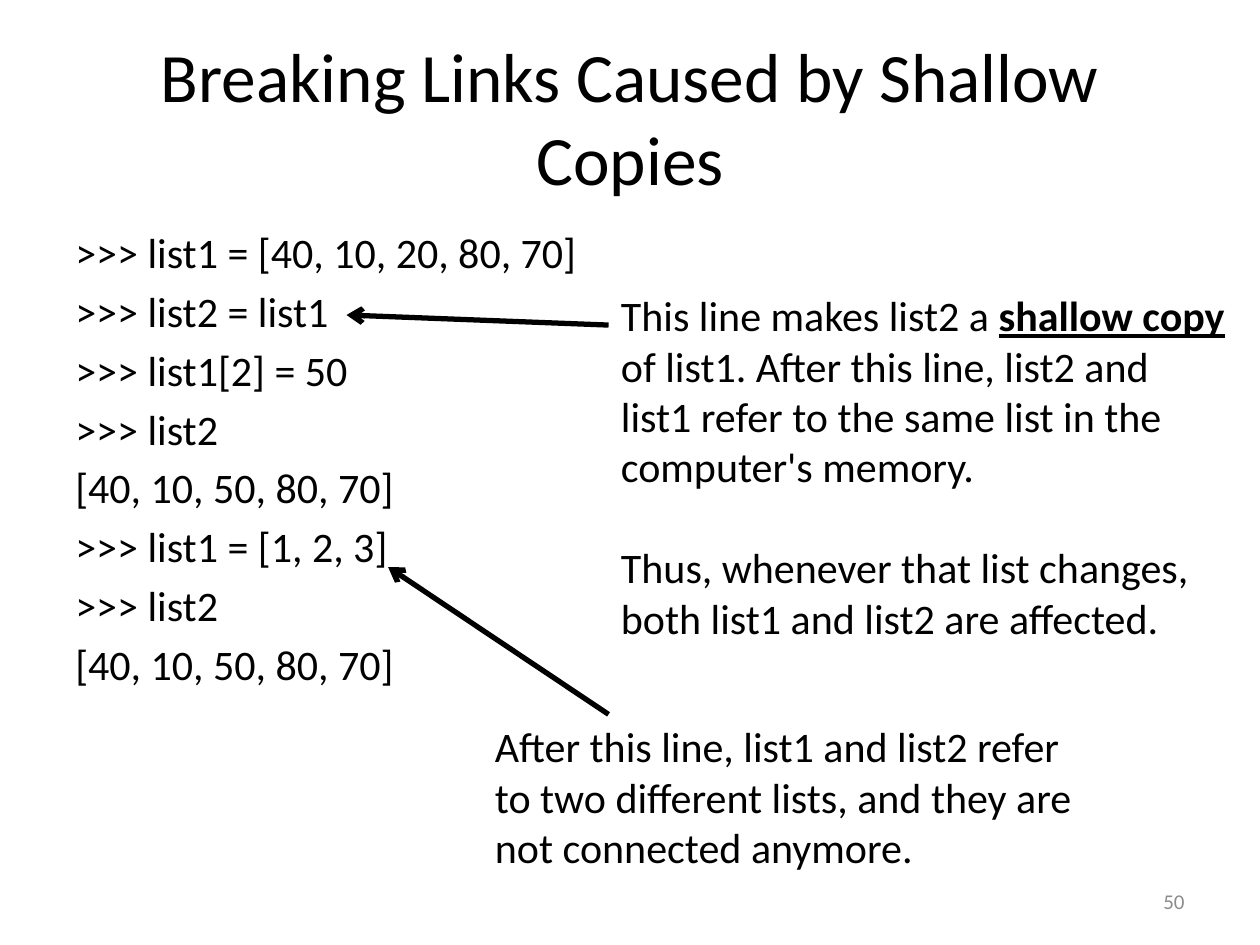
from lxml import etree
from pptx import Presentation
from pptx import util as u
from pptx.dml.color import RGBColor
from pptx.enum import shapes, text
from pptx.oxml.ns import qn

BLACK = RGBColor(0, 0, 0)
GRAY = RGBColor(0x8C, 0x8C, 0x8C)
LEAD = 28.8  # points, height of one line of the notes

CODE = [
    ">>> list1 = [40, 10, 20, 80, 70]",
    ">>> list2 = list1",
    ">>> list1[2] = 50",
    ">>> list2",
    "[40, 10, 50, 80, 70]",
    ">>> list1 = [1, 2, 3]",
    ">>> list2",
    "[40, 10, 50, 80, 70]",
]


class Deck:
    base = {"name": "Calibri", "size": u.Pt(24), "bold": False, "underline": False}

    def __init__(self, wide, high):
        self.prs = Presentation()
        self.prs.slide_width, self.prs.slide_height = u.Inches(wide), u.Inches(high)
        self.slide = self.prs.slides.add_slide(self.prs.slide_layouts[5])

    def fill(self, shape, paras, align=text.PP_ALIGN.LEFT, anchor=text.MSO_ANCHOR.TOP,
             before=0, after=0, hang=0, color=BLACK, **style):
        """Write paragraphs, each a list of (words, extra format) runs."""
        frame = shape.text_frame
        frame.word_wrap = True
        frame.auto_size = text.MSO_AUTO_SIZE.NONE
        frame.vertical_anchor = anchor
        for i, runs in enumerate(paras):
            para = frame.add_paragraph() if i else frame.paragraphs[0]
            para.alignment = align
            para.space_before, para.space_after = u.Pt(before), u.Pt(after)
            if hang:
                props = para._p.get_or_add_pPr()
                props.set("marL", str(u.Inches(hang)))
                props.set("indent", str(-u.Inches(hang)))
            for words, extra in runs:
                run = para.add_run()
                run.text = words
                for key, value in {**self.base, **style, **extra}.items():
                    setattr(run.font, key, value)
                run.font.color.rgb = color

    def title(self, box, words, **form):
        shape = self.slide.shapes.title
        for key, value in zip(("left", "top", "width", "height"), box):
            setattr(shape, key, u.Inches(value))
        self.fill(shape, [[(words, {})]], **form)

    def text(self, box, paras, **form):
        shape = self.slide.shapes.add_textbox(*map(u.Inches, box))
        self.fill(shape, paras, **form)

    def arrow(self, start, end):
        line = self.slide.shapes.add_connector(
            shapes.MSO_CONNECTOR.STRAIGHT, *map(u.Inches, start + end))
        line.line.color.rgb = BLACK
        line.line.width = u.Pt(3)
        stroke = line._element.spPr.find(qn("a:ln"))
        etree.SubElement(stroke, qn("a:tailEnd"), type="arrow")
        etree.SubElement(line._element.spPr, qn("a:effectLst"))


def main():
    deck = Deck(10, 7.5)
    middle = text.MSO_ANCHOR.MIDDLE

    # Title
    deck.title((0.5, 0.3, 9, 1.25), "Breaking Links Caused by Shallow Copies",
               align=text.PP_ALIGN.CENTER, anchor=middle, size=u.Pt(39.6))

    # Code session
    deck.text((0.5, 1.75, 9, 4.95), [[(line, {})] for line in CODE],
              before=4.8, hang=0.38)

    # Slide number
    deck.text((7.17, 6.95, 2.33, 0.4), [[("50", {})]], align=text.PP_ALIGN.RIGHT,
              anchor=middle, color=GRAY, size=u.Pt(12))

    # Note on the shallow copy
    deck.text((4.83, 2.25, 5, 2.93), [
        [("This line makes list2 a ", {}),
         ("shallow copy", {"bold": True, "underline": True}),
         (" of list1. After this line, list2 and list1 refer to the same list "
          "in the computer's memory.", {})],
        [("Thus, whenever that list changes, both list1 and list2 are affected.", {})],
    ], after=LEAD)

    # Arrows from the notes to the code lines
    deck.arrow((4.83, 2.58), (2.75, 2.5))
    deck.arrow((4.83, 5.67), (3.08, 4.5))

    # Note on the new list
    deck.text((3.83, 5.67, 5, 1.31), [
        [("After this line, list1 and list2 refer to two different lists, "
          "and they are not connected anymore.", {})],
    ])

    deck.prs.save("out.pptx")


if __name__ == "__main__":
    main()
